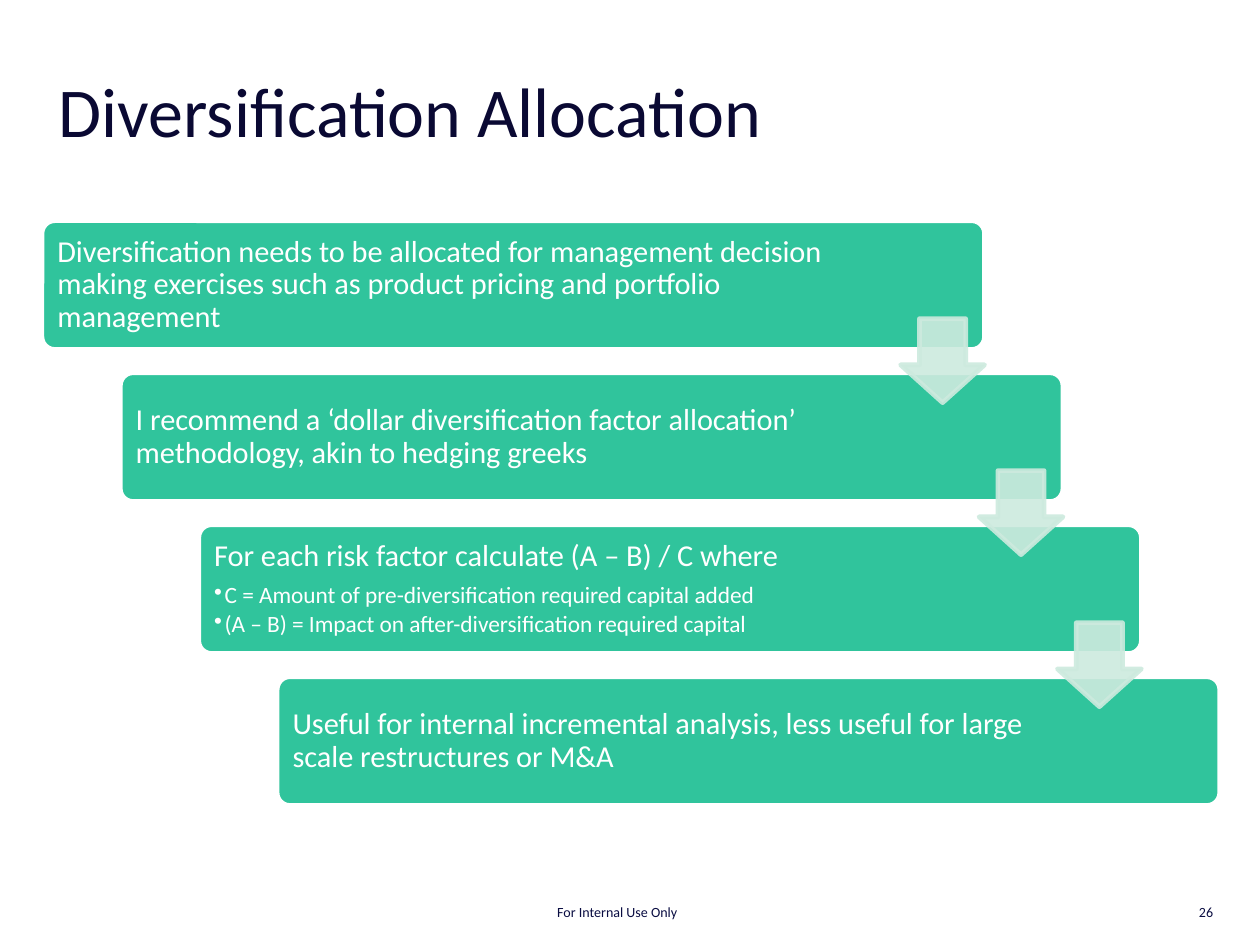
from lxml.etree import SubElement
from pptx import Presentation
from pptx.dml.color import RGBColor
from pptx.enum.shapes import MSO_SHAPE
from pptx.enum.text import MSO_ANCHOR, MSO_AUTO_SIZE, PP_ALIGN
from pptx.oxml.ns import qn
from pptx.util import Pt

COLORS = {"title": "0A0933", "foot": "0A0D42", "card": "30C49C",
          "arrow": "CDEADE", "white": "FFFFFF"}
STEPS = [
    ("Diversification needs to be allocated for management decision making "
     "exercises such as product pricing and portfolio management", [], 66),
    ("I recommend a ‘dollar diversification factor allocation’ methodology, "
     "akin to hedging greeks", [], 75),
    ("For each risk factor calculate (A – B) / C where",
     ["C = Amount of pre-diversification required capital added",
      "(A – B) = Impact on after-diversification required capital"], 75),
    ("Useful for internal incremental analysis, less useful for large scale "
     "restructures or M&A", [], 75),
]


class Deck:
    font = "Calibri"

    def __init__(self, wide, high):
        self.deck = Presentation()
        self.deck.slide_width, self.deck.slide_height = Pt(wide), Pt(high)
        self.slide = self.deck.slides.add_slide(self.deck.slide_layouts[5])

    def color(self, name):
        return RGBColor.from_string(COLORS[name])

    def style(self, para, text, size, color, align=PP_ALIGN.LEFT):
        para.text = text
        para.alignment = align
        para.font.name = self.font
        para.font.size = Pt(size)
        para.font.color.rgb = self.color(color)

    def title(self, text, left, top, wide, high):
        box = self.slide.shapes.title
        box.left, box.top, box.width, box.height = map(Pt, (left, top, wide, high))
        frame = box.text_frame
        frame.auto_size = MSO_AUTO_SIZE.NONE
        frame.vertical_anchor = MSO_ANCHOR.MIDDLE
        self.style(frame.paragraphs[0], text, 30, "title")

    def label(self, text, left, top, wide, high, align):
        box = self.slide.shapes.add_textbox(*map(Pt, (left, top, wide, high)))
        frame = box.text_frame
        frame.word_wrap = True
        frame.vertical_anchor = MSO_ANCHOR.MIDDLE
        self.style(frame.paragraphs[0], text, 6, "foot", align)

    def shape(self, kind, left, top, wide, high, fill, line):
        item = self.slide.shapes.add_shape(kind, *map(Pt, (left, top, wide, high)))
        item.shadow.inherit = False
        item.fill.solid()
        item.fill.fore_color.rgb = self.color(fill)
        item.line.color.rgb = self.color(line)
        item.line.width = Pt(2)
        return item

    def card(self, left, top, wide, high, text, points, right):
        item = self.shape(MSO_SHAPE.ROUNDED_RECTANGLE, left, top, wide, high,
                          "card", "white")
        item.adjustments[0] = 0.1
        frame = item.text_frame
        frame.word_wrap = True
        frame.vertical_anchor = MSO_ANCHOR.MIDDLE
        frame.margin_left, frame.margin_right = Pt(5), Pt(right)
        frame.margin_top = frame.margin_bottom = Pt(3.6)
        head = frame.paragraphs[0]
        head.line_spacing = 0.9
        head.space_after = Pt(4.5)
        self.style(head, text, 13, "white")
        for point in points:
            self.bullet(frame.add_paragraph(), point)

    def bullet(self, para, text):
        para.level = 1
        para.line_spacing = 0.9
        para.space_after = Pt(1.5)
        props = para._p.get_or_add_pPr()
        props.set("marL", str(Pt(4.5)))
        props.set("indent", str(-Pt(4.5)))
        SubElement(props, qn("a:buChar")).set("char", "•")
        self.style(para, text, 10, "white")

    def arrow(self, left, top, size):
        item = self.shape(MSO_SHAPE.DOWN_ARROW, left, top, size, size,
                          "arrow", "arrow")
        item.adjustments[0], item.adjustments[1] = 0.55, 0.45
        for tone in item._element.spPr.iter(qn("a:srgbClr")):
            SubElement(tone, qn("a:alpha")).set("val", "90000")


def main():
    show = Deck(540, 405)
    show.title("Diversification Allocation", 18, 24.5, 505, 44.5)
    show.label("For Internal Use Only", 173.5, 381.6, 182, 18, PP_ALIGN.CENTER)
    show.label("26", 401, 381.6, 126, 18, PP_ALIGN.RIGHT)
    left, top, across, down = 18, 94.6, 33.6, 65.15
    for i, (text, points, right) in enumerate(STEPS):
        show.card(left + i * across, top + i * down, 404, 55.2,
                  text, points, right)
    for i in range(len(STEPS) - 1):
        show.arrow(386 + i * across, 136.6 + i * down, 36)
    show.deck.save("out.pptx")


if __name__ == "__main__":
    main()
